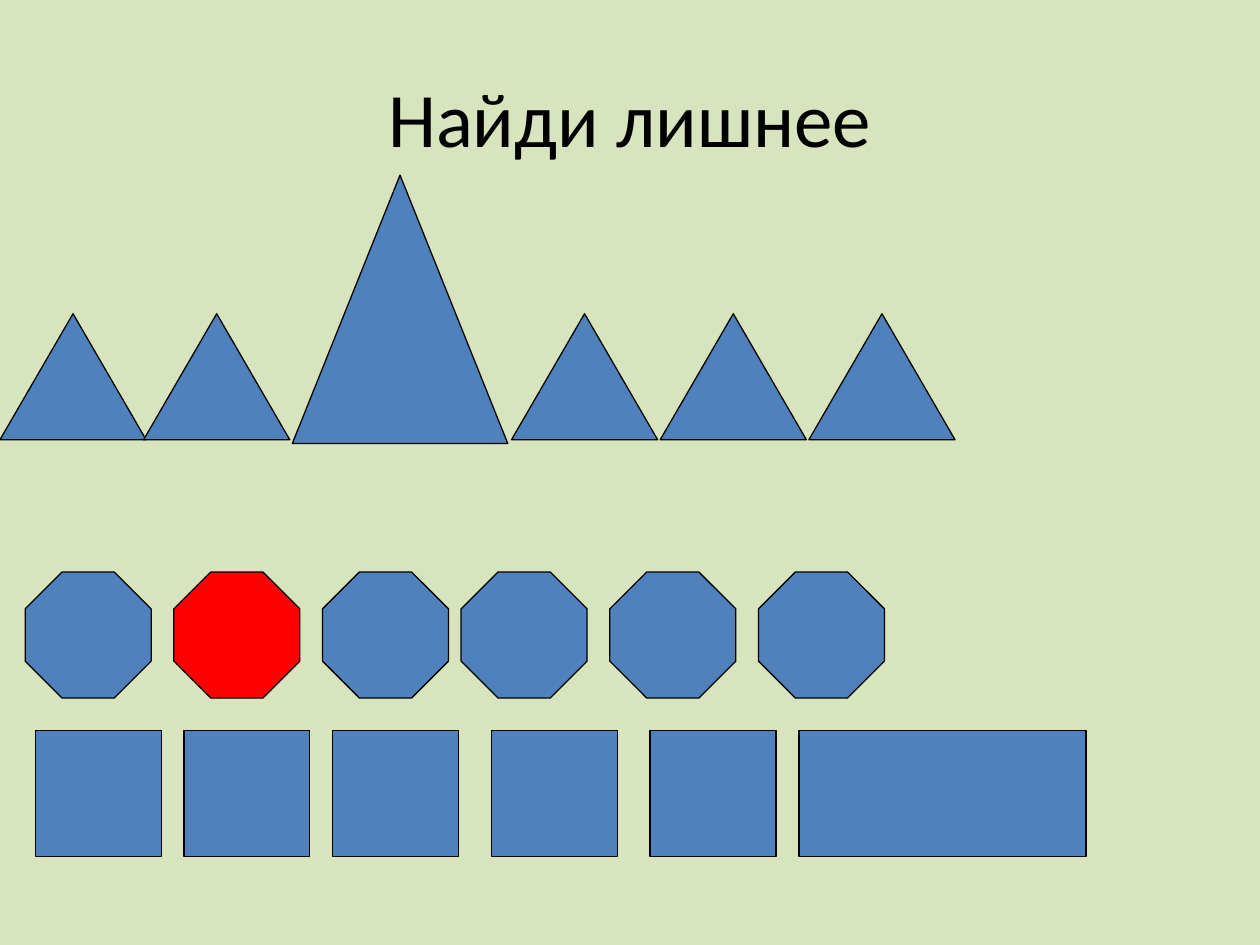
from pptx import Presentation
from pptx import util as u
from pptx.dml import color
from pptx.enum import shapes, text

# Content: each row holds runs of evenly spaced shapes plus the odd one out
TITLE = "Найди лишнее"
KIND = shapes.MSO_SHAPE
ROWS = [
    dict(kind=KIND.ISOSCELES_TRIANGLE, top=2.49, size=(1.16, 1),
         runs=[(0, 1), (1.14, 1), (4.06, 3)],
         odd=dict(box=(2.32, 1.39, 1.71, 2.13), fill="shape")),
    dict(kind=KIND.OCTAGON, top=4.54, size=(1, 1),
         runs=[(0.2, 1), (2.56, 1), (3.66, 3)],
         odd=dict(box=(1.38, 4.54, 1, 1), fill="accent")),
    dict(kind=KIND.RECTANGLE, top=5.8, size=(1, 1),
         runs=[(0.28, 3), (3.9, 1), (5.16, 1)],
         odd=dict(box=(6.34, 5.8, 2.28, 1), fill="shape")),
]
PITCH = 1.18  # step between neighbours in a run

THEME = dict(background="D7E4BD", shape="4F81BD", accent="FF0000",
             ink="000000", font="Calibri", title=44, line=0.75)


def rgb(name):
    return color.RGBColor.from_string(THEME[name])


def inches(box):
    return [u.Inches(v) for v in box]


def add_text(s, content, box, size="title", ink="ink",
             align=text.PP_ALIGN.CENTER, anchor=text.MSO_ANCHOR.MIDDLE):
    tf = s.shapes.add_textbox(*inches(box)).text_frame
    tf.word_wrap = True
    tf.vertical_anchor = anchor
    p = tf.paragraphs[0]
    p.alignment = align
    r = p.add_run()
    r.text = content
    r.font.name = THEME["font"]
    r.font.size = u.Pt(THEME[size])
    r.font.color.rgb = rgb(ink)


def add_figure(s, kind, box, fill="shape"):
    sp = s.shapes.add_shape(kind, *inches(box))
    sp.shadow.inherit = False
    sp.fill.solid()
    sp.fill.fore_color.rgb = rgb(fill)
    sp.line.color.rgb = rgb("ink")
    sp.line.width = u.Pt(THEME["line"])


def main():
    prs = Presentation()
    prs.slide_width, prs.slide_height = inches((10, 7.5))
    s = prs.slides.add_slide(prs.slide_layouts[6])
    s.background.fill.solid()
    s.background.fill.fore_color.rgb = rgb("background")

    # Title
    add_text(s, TITLE, (0.5, 0.3, 9, 1.25))

    # Rows of figures
    for row in ROWS:
        for start, count in row["runs"]:
            for i in range(count):
                add_figure(s, row["kind"],
                           (start + i * PITCH, row["top"], *row["size"]))
        add_figure(s, row["kind"], **row["odd"])

    prs.save("out.pptx")


if __name__ == "__main__":
    main()
